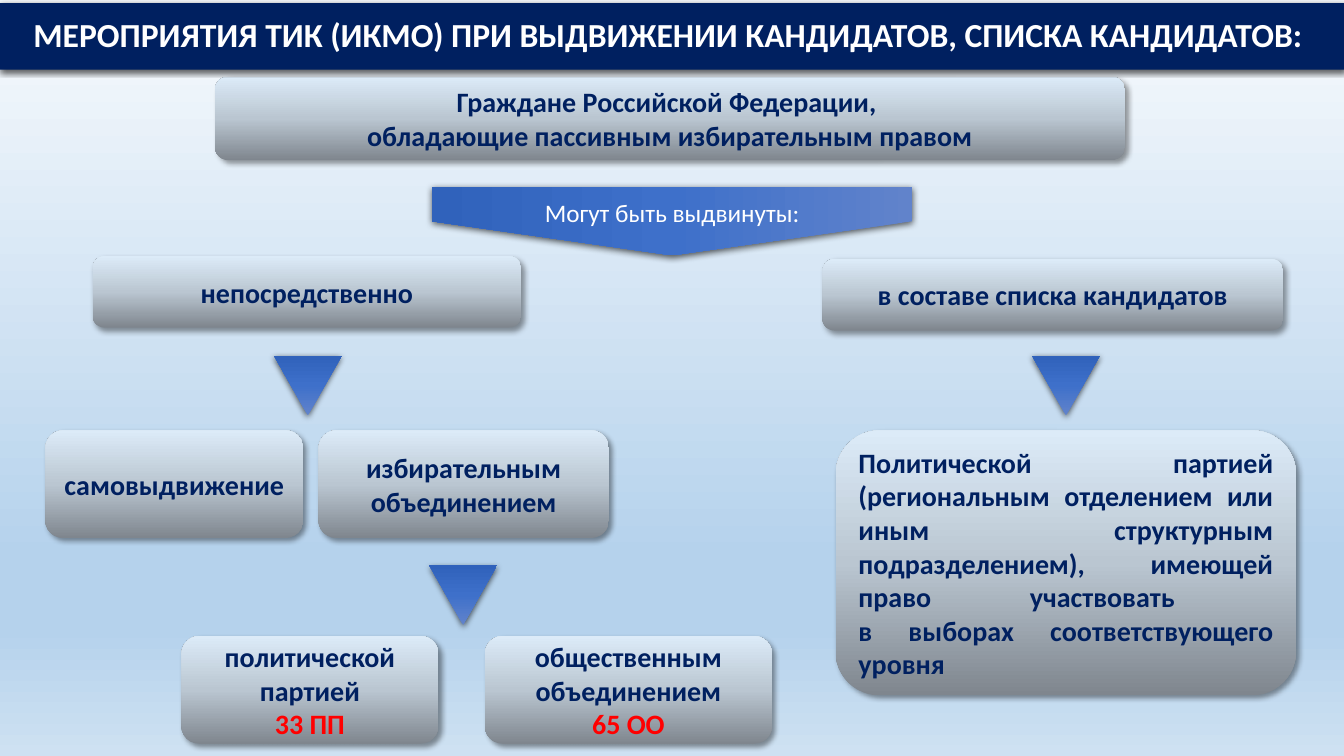
from lxml.etree import SubElement
from pptx import Presentation
from pptx.dml.color import RGBColor
from pptx.enum.shapes import MSO_SHAPE
from pptx.enum.text import MSO_ANCHOR, MSO_AUTO_SIZE, PP_ALIGN
from pptx.oxml.ns import qn
from pptx.util import Pt

COLORS = {"navy": "002060", "white": "FFFFFF", "red": "FF0000", "shadow": "000000"}
SKY = [(0, "F7FAFD"), (74, "B5D2EC"), (83, "B5D2EC"), (100, "CEE1F2")]
SILVER = [(0, "7F868E"), (50, "BAC6D1"), (100, "DCEBF8")]
BLUE = [(0, "6183CB"), (50, "3E70CA"), (100, "3062BB")]
# opacity in percent, blur and distance in points, direction in degrees
SOFT_SHADOW = (40, 4, 3, 45)
DEEP_SHADOW = (63, 4.5, 1.5, 90)
FONT = "Calibri"
TITLE_HEIGHT = 47.5
ARROW_WIDTH, ARROW_HEIGHT = 48.2, 42.5
HEAD_HEIGHT, CARD_HEIGHT = 51.1, 77


def paint_gradient(fill, owner, stops, downward):
    """Fill with vertical colour stops; owner is the element that holds the fill."""
    fill.gradient()
    fill.gradient_angle = 270 if downward else 90
    stop_list = next(owner.iter(qn("a:gsLst")))
    for stop in list(stop_list):
        stop_list.remove(stop)
    for position, color in stops:
        stop = SubElement(stop_list, qn("a:gs"), pos=str(position * 1000))
        SubElement(stop, qn("a:srgbClr"), val=color)


def cast_shadow(shape, shadow):
    opacity, blur, distance, direction = shadow
    shape.shadow.inherit = False
    effects = shape._element.spPr.find(qn("a:effectLst"))
    outer = SubElement(effects, qn("a:outerShdw"), blurRad=str(Pt(blur)),
                       dist=str(Pt(distance)), dir=str(direction * 60000),
                       algn="ctr", rotWithShape="0")
    color = SubElement(outer, qn("a:srgbClr"), val=COLORS["shadow"])
    SubElement(color, qn("a:alpha"), val=str(opacity * 1000))


def place(shape, left, top, width, height):
    shape.left, shape.top = Pt(left), Pt(top)
    shape.width, shape.height = Pt(width), Pt(height)


def add_gradient_shape(page, kind, box, stops, shadow, downward):
    shape = page.shapes.add_shape(kind, *(Pt(length) for length in box))
    paint_gradient(shape.fill, shape._element, stops, downward)
    shape.line.fill.background()
    cast_shadow(shape, shadow)
    return shape


def write(shape, lines, size=20, color="navy", bold=True, align=PP_ALIGN.CENTER):
    """Write one paragraph per line; a line is text or a (text, colour) pair."""
    frame = shape.text_frame
    frame.word_wrap = True
    frame.auto_size = MSO_AUTO_SIZE.NONE
    frame.vertical_anchor = MSO_ANCHOR.MIDDLE
    for index, line in enumerate(lines):
        text, tint = (line, color) if isinstance(line, str) else line
        para = frame.paragraphs[0] if index == 0 else frame.add_paragraph()
        para.alignment = align
        for number, part in enumerate(text.split("\n")):
            if number:
                para.add_line_break()
            span = para.add_run()
            span.text = part
            span.font.name, span.font.size, span.font.bold = FONT, Pt(size), bold
            span.font.color.rgb = RGBColor.from_string(COLORS[tint])


def add_card(page, box, lines, align=PP_ALIGN.CENTER):
    card = add_gradient_shape(page, MSO_SHAPE.ROUNDED_RECTANGLE, box,
                              SILVER, SOFT_SHADOW, downward=False)
    write(card, lines, align=align)


def add_down_arrow(page, left, top):
    arrow = add_gradient_shape(page, MSO_SHAPE.ISOSCELES_TRIANGLE,
                               (left, top, ARROW_WIDTH, ARROW_HEIGHT),
                               BLUE, DEEP_SHADOW, downward=True)
    arrow.rotation = 180


def add_pointer(page, left, top, width, height, text):
    """Pentagon turned to point down, with its text kept upright."""
    box = (left + (width - height) / 2, top + (height - width) / 2, height, width)
    pointer = add_gradient_shape(page, MSO_SHAPE.PENTAGON, box,
                                 BLUE, DEEP_SHADOW, downward=True)
    pointer.rotation = 90
    write(pointer, [text], size=18, color="white", bold=False)
    pointer.text_frame._txBody.bodyPr.set("vert", "vert270")


def add_citizens(page, left, top, width):
    add_card(page, (left, top, width, 59.8),
             ["Граждане Российской Федерации, ",
              "обладающие пассивным избирательным правом"])
    add_pointer(page, left + 155, top + 79, 343.4, 48.7, "Могут быть выдвинуты:")


def add_direct_branch(page, left, top):
    add_card(page, (left + 33.8, top, 306, HEAD_HEIGHT), ["непосредственно"])
    add_down_arrow(page, left + 163.4, top + 71.3)
    kinds_top = top + 124.5
    add_card(page, (left, kinds_top, 184.3, CARD_HEIGHT), ["самовыдвижение"])
    add_card(page, (left + 195.1, kinds_top, 207.4, CARD_HEIGHT),
             ["избирательным объединением"])
    add_down_arrow(page, left + 274.3, kinds_top + 96.5)
    unions_top = kinds_top + 146.9
    add_card(page, (left + 97.2, unions_top, 183.6, CARD_HEIGHT),
             ["политической партией", ("33 ПП", "red")])
    add_card(page, (left + 313.9, unions_top, 205.2, CARD_HEIGHT),
             ["общественным", "объединением", ("65 ОО", "red")])


def add_list_branch(page, left, top, width):
    add_card(page, (left, top, width, HEAD_HEIGHT), ["в составе списка кандидатов"])
    add_down_arrow(page, left + 149.8, top + 69.2)
    add_card(page, (left + 9.4, top + 122.4, width, 189.4),
             ["Политической партией (региональным отделением или иным структурным "
              "подразделением), имеющей право участвовать \n"
              "в выборах соответствующего уровня"], PP_ALIGN.JUSTIFY)


def add_title(page, left, top, width):
    title = page.shapes.title
    place(title, left, top, width, TITLE_HEIGHT)
    title.fill.solid()
    title.fill.fore_color.rgb = RGBColor.from_string(COLORS["navy"])
    cast_shadow(title, DEEP_SHADOW)
    write(title, ["МЕРОПРИЯТИЯ ТИК (ИКМО) ПРИ ВЫДВИЖЕНИИ КАНДИДАТОВ, СПИСКА КАНДИДАТОВ: "],
          size=24, color="white")
    title.text_frame.paragraphs[0].line_spacing = 0.9
    page.shapes._spTree.append(title._element)  # bring to front


def main():
    deck = Presentation()
    deck.slide_width, deck.slide_height = Pt(960), Pt(540)
    page = deck.slides.add_slide(deck.slide_layouts[5])
    paint_gradient(page.background.fill, page._element, SKY, downward=True)
    add_citizens(page, 153.4, 54.7, 650.2)
    add_direct_branch(page, 32.4, 182.9)
    add_list_branch(page, 587.5, 185, 329)
    add_title(page, 0, 2.2, 960)
    deck.save("out.pptx")


if __name__ == "__main__":
    main()
